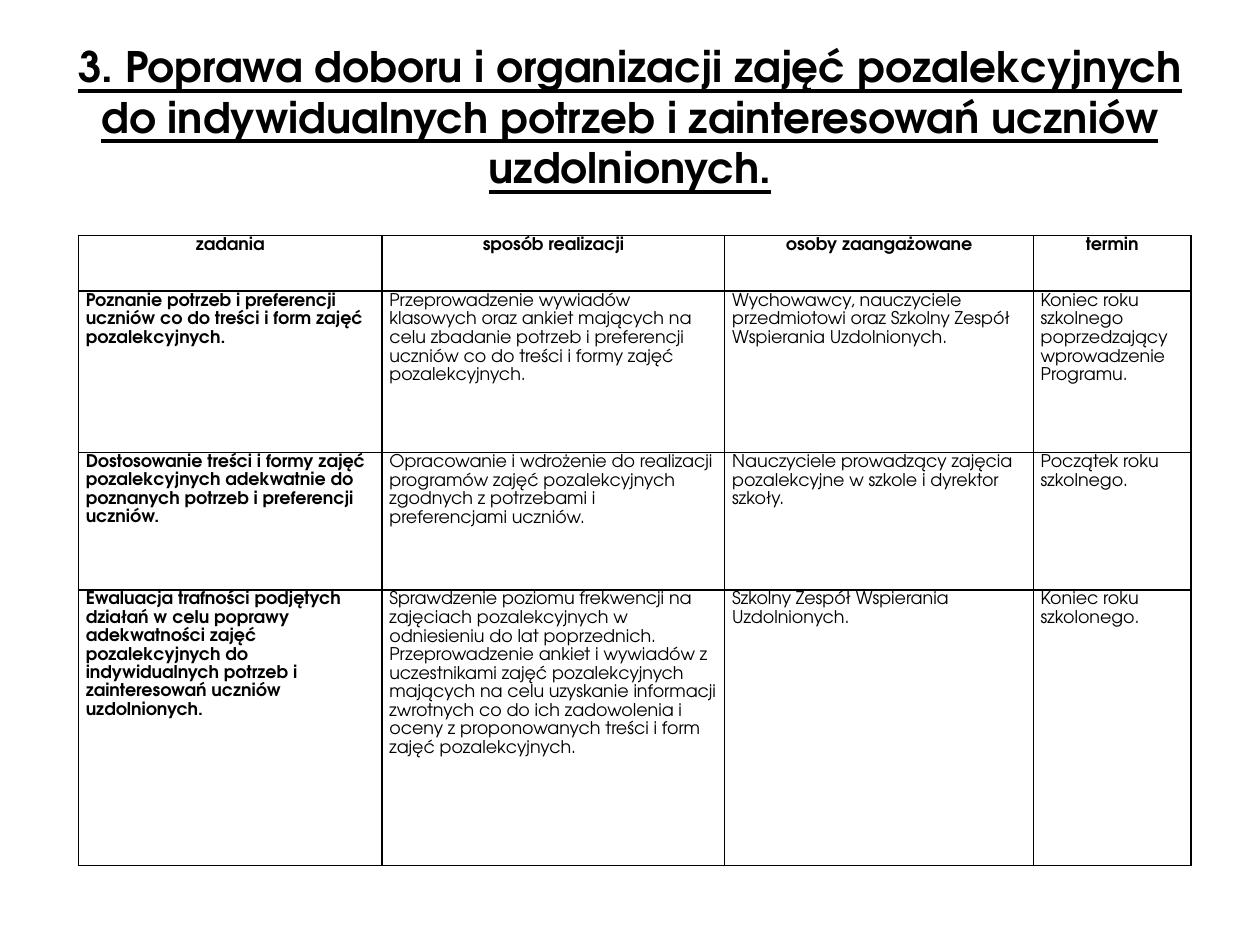
import pptx
import pptx.util
import pptx.dml.color
import pptx.enum.text
import pptx.oxml
import pptx.oxml.ns
from pptx.util import Cm

FONT = "TeX Gyre Adventor"
COLORS = {"text": "000000", "border": "000000", "background": "FFFFFF"}
ALIGN = pptx.enum.text.PP_ALIGN


def add_run(paragraph, text, size, bold, underline=False):
    run = paragraph.add_run()
    run.text = text
    run.font.name = FONT
    run.font.size = pptx.util.Pt(size)
    run.font.bold = bold
    run.font.underline = underline
    run.font.color.rgb = pptx.dml.color.RGBColor.from_string(COLORS["text"])


def add_borders(cell):
    properties = cell._tc.get_or_add_tcPr()
    for position, side in enumerate(("lnL", "lnR", "lnT", "lnB")):
        properties.insert(position, pptx.oxml.parse_xml(
            f'<a:{side} {pptx.oxml.ns.nsdecls("a")} w="12700"><a:solidFill>'
            f'<a:srgbClr val="{COLORS["border"]}"/></a:solidFill></a:{side}>'))


presentation = pptx.Presentation()
presentation.slide_width = Cm(25.4)
presentation.slide_height = Cm(19.05)
slide = presentation.slides.add_slide(presentation.slide_layouts[5])

# Title
title = slide.shapes.title
title.left, title.top, title.width, title.height = Cm(1.27), Cm(0.76), Cm(22.86), Cm(3.18)
frame = title.text_frame
frame.word_wrap = True
frame.auto_size = pptx.enum.text.MSO_AUTO_SIZE.NONE
frame.vertical_anchor = pptx.enum.text.MSO_ANCHOR.MIDDLE
frame.paragraphs[0].alignment = ALIGN.CENTER
add_run(frame.paragraphs[0],
        "3. Poprawa doboru i organizacji zajęć pozalekcyjnych do indywidualnych "
        "potrzeb i zainteresowań uczniów uzdolnionych.", 24, True, True)

# Table content: a line break in a cell starts a new paragraph
rows = [
    ["zadania", "sposób realizacji", "osoby zaangażowane", "termin"],
    ["Poznanie potrzeb i preferencji uczniów co do treści i form zajęć pozalekcyjnych.",
     "Przeprowadzenie wywiadów klasowych oraz ankiet mających na celu zbadanie potrzeb "
     "i preferencji uczniów co do treści i formy zajęć pozalekcyjnych.",
     "Wychowawcy, nauczyciele przedmiotowi oraz Szkolny Zespół Wspierania Uzdolnionych.",
     "Koniec roku szkolnego poprzedzający wprowadzenie Programu."],
    ["Dostosowanie treści i formy zajęć pozalekcyjnych adekwatnie do poznanych potrzeb "
     "i preferencji uczniów.",
     "Opracowanie i wdrożenie do realizacji programów zajęć pozalekcyjnych zgodnych "
     "z potrzebami i preferencjami uczniów.",
     "Nauczyciele prowadzący zajęcia pozalekcyjne w szkole i dyrektor szkoły.",
     "Początek roku szkolnego."],
    ["Ewaluacja trafności podjętych działań w celu poprawy adekwatności zajęć "
     "pozalekcyjnych do indywidualnych potrzeb i zainteresowań uczniów uzdolnionych.",
     "Sprawdzenie poziomu frekwencji na zajęciach pozalekcyjnych w odniesieniu do lat "
     "poprzednich.\n"
     "Przeprowadzenie ankiet i wywiadów z uczestnikami zajęć pozalekcyjnych mających "
     "na celu uzyskanie informacji zwrotnych co do ich zadowolenia i oceny "
     "z proponowanych treści i form zajęć pozalekcyjnych.",
     "Szkolny Zespół Wspierania Uzdolnionych.",
     "Koniec roku szkolonego."],
]
column_widths = [6.12, 6.91, 6.22, 3.18]
row_heights = [1.12, 3.25, 2.77, 5.56]

# Table
table = slide.shapes.add_table(len(rows), len(column_widths), Cm(1.58), Cm(4.75),
                               Cm(sum(column_widths)), Cm(sum(row_heights))).table
for column, width in zip(table.columns, column_widths):
    column.width = Cm(width)
for row, height in zip(table.rows, row_heights):
    row.height = Cm(height)

for row_index, texts in enumerate(rows):
    for column_index, text in enumerate(texts):
        cell = table.cell(row_index, column_index)
        cell.margin_left = cell.margin_right = Cm(0.15)
        cell.margin_top = cell.margin_bottom = 0
        cell.fill.solid()
        cell.fill.fore_color.rgb = pptx.dml.color.RGBColor.from_string(COLORS["background"])
        add_borders(cell)
        for index, line in enumerate(text.split("\n")):
            paragraph = cell.text_frame.add_paragraph() if index else cell.text_frame.paragraphs[0]
            paragraph.alignment = ALIGN.LEFT if row_index else ALIGN.CENTER
            paragraph.line_spacing = 1.15
            add_run(paragraph, line, 10, row_index == 0 or column_index == 0)

presentation.save("out.pptx")
